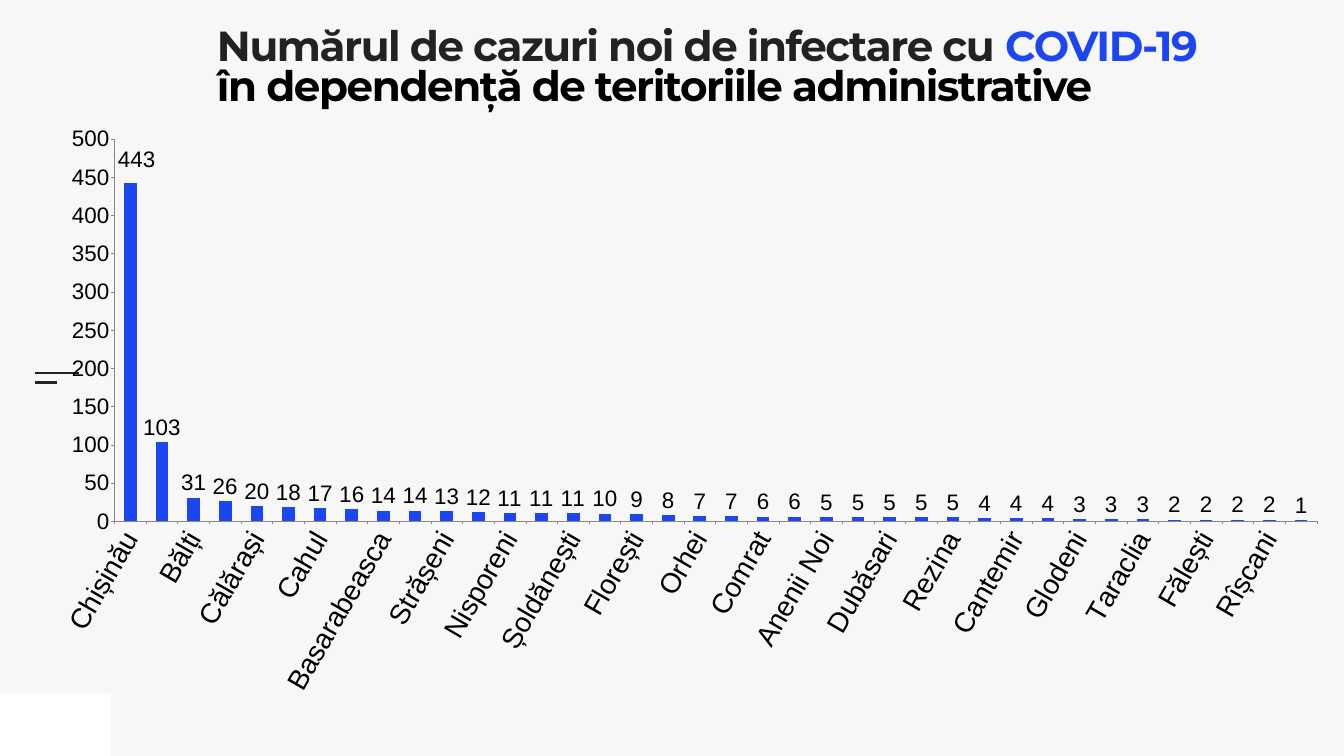
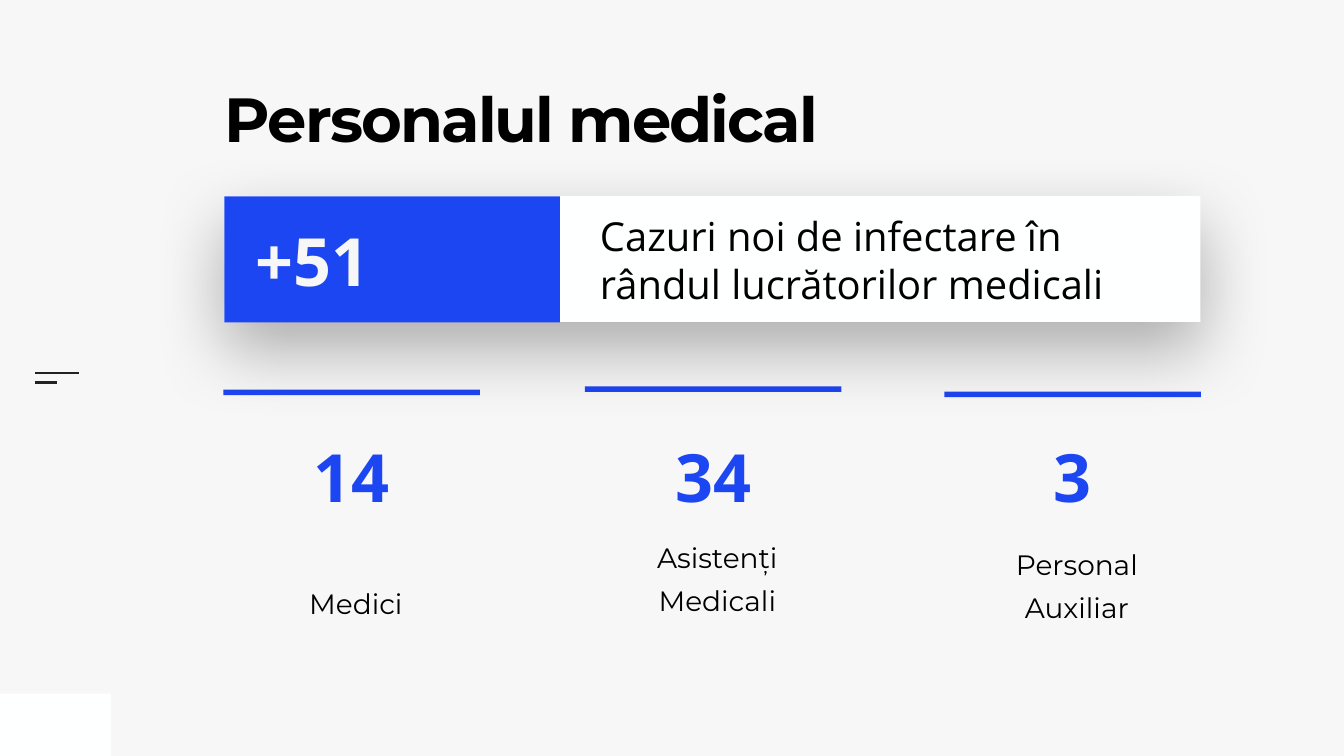
from dataclasses import dataclass

from lxml.etree import SubElement
from pptx import Presentation
from pptx.chart.data import CategoryChartData
from pptx.dml.color import RGBColor
from pptx.enum.chart import XL_CHART_TYPE as ChartType, XL_LABEL_POSITION as LabelPosition
from pptx.enum.chart import XL_TICK_MARK as TickMark
from pptx.enum.shapes import MSO_CONNECTOR as Connector, MSO_SHAPE as Shape
from pptx.enum.text import MSO_ANCHOR as Anchor, MSO_AUTO_SIZE as AutoSize, PP_ALIGN as Align
from pptx.oxml import parse_xml
from pptx.oxml.ns import nsdecls, qn
from pptx.util import Pt


@dataclass(frozen=True)
class Theme:
    paper: RGBColor = RGBColor(0xF7, 0xF7, 0xF7)
    white: RGBColor = RGBColor(0xFE, 0xFF, 0xFF)
    blue: RGBColor = RGBColor(0x1D, 0x46, 0xF3)
    ink: RGBColor = RGBColor(0x22, 0x22, 0x22)
    black: RGBColor = RGBColor(0, 0, 0)
    axis: RGBColor = RGBColor(0x87, 0x87, 0x87)
    heading_font: str = "Montserrat"
    figure_font: str = "Open Sans"
    chart_font: str = "Arial"
    chart_title: float = 60
    title: float = 89
    figure: float = 95
    headline: float = 57
    caption: float = 40
    values: float = 32


theme = Theme()


def add_panel(slide, left, top, width, height, fill):
    panel = slide.shapes.add_shape(Shape.RECTANGLE, Pt(left), Pt(top), Pt(width), Pt(height))
    panel.shadow.inherit = False
    panel.fill.solid()
    panel.fill.fore_color.rgb = fill
    panel.line.fill.background()
    return panel


def style_run(run, font, size, color, bold=False, tracking=0):
    """Format a run; tracking is the letter spacing in points."""
    run.font.name = font
    run.font.size = Pt(size)
    run.font.color.rgb = color
    run.font.bold = bold
    if tracking:
        run.font._element.set("spc", str(round(tracking * 100)))


prs = Presentation()
prs.slide_width, prs.slide_height = Pt(1920), Pt(1080)
background = prs.slide_master.background.fill
background.solid()
background.fore_color.rgb = theme.paper

# Parts that both slides share
title_boxes = [(310, 42, 1441, 196), (321, 134.6, 937, 196)]
for title_box in title_boxes:
    slide = prs.slides.add_slide(prs.slide_layouts[5])
    add_panel(slide, 0, 991, 158.4, 89, theme.white)
    for y, right in ((533.5, 113), (546.5, 81)):
        dash = slide.shapes.add_connector(Connector.STRAIGHT, Pt(50), Pt(y), Pt(right), Pt(y))
        dash.line.color.rgb = theme.ink
        dash.line.width = Pt(3)
        SubElement(dash._element.spPr, qn("a:effectLst"))
    title = slide.shapes.title
    title.left, title.top, title.width, title.height = map(Pt, title_box)
    frame = title.text_frame
    frame.margin_left = frame.margin_top = frame.margin_right = frame.margin_bottom = 0
    frame.vertical_anchor = Anchor.TOP
    frame.auto_size = AutoSize.NONE
    frame.word_wrap = True

territories, staff = prs.slides

# New cases by territory
frame = territories.shapes.title.text_frame
frame.text = "Numărul de cazuri noi de infectare cu \nîn dependență de teritoriile administrative"
frame.paragraphs[0].add_run().text = "COVID-19"
title_runs = [run for line in frame.paragraphs for run in line.runs]
for run, color in zip(title_runs, (theme.ink, theme.blue, theme.black)):
    style_run(run, theme.heading_font, theme.chart_title, color, True, -2)

cases = {
    "Chișinău": 443, "Transnistria": 103, "Bălți": 31, "Cimișlia": 26, "Călărași": 20,
    "Edineț": 18, "Cahul": 17, "Ștefan Vodă": 16, "Basarabeasca": 14, "Ialoveni": 14,
    "Strășeni": 13, "Telenești": 12, "Nisporeni": 11, "Ocnița": 11, "Șoldănești": 11,
    "Criuleni": 10, "Florești": 9, "Drochia": 8, "Orhei": 7, "Ungheni": 7, "Comrat": 6,
    "Sîngerei": 6, "Anenii Noi": 5, "Căușeni": 5, "Dubăsari": 5, "Hîncești": 5,
    "Rezina": 5, "Briceni": 4, "Cantemir": 4, "Vulcănești": 4, "Glodeni": 3, "Soroca": 3,
    "Taraclia": 3, "Dondușeni": 2, "Fălești": 2, "Leova": 2, "Rîșcani": 2,
    "Ceadîr-Lunga": 1,
}
case_data = CategoryChartData()
case_data.categories = list(cases)
case_data.add_series("Series 1", list(cases.values()))
chart = territories.shapes.add_chart(
    ChartType.COLUMN_CLUSTERED, Pt(82), Pt(180), Pt(1812), Pt(853), case_data).chart
chart.has_legend = False
chart.has_title = False
chart.font.name = theme.chart_font
chart.font.size = Pt(theme.caption)
chart.font.color.rgb = theme.black

plot = chart.plots[0]
plot.gap_width = 150
plot.vary_by_categories = False
columns = plot.series[0]
columns.format.fill.solid()
columns.format.fill.fore_color.rgb = theme.blue
first_label = columns.points[0].data_label
for labels in (columns.data_labels, first_label):
    labels.position = LabelPosition.OUTSIDE_END
    labels.font.size = Pt(theme.values)
    labels.font.name = theme.chart_font
    labels.font.color.rgb = theme.black
columns.data_labels.show_value = True

for axis, size in ((chart.category_axis, theme.caption), (chart.value_axis, theme.values)):
    axis.has_major_gridlines = False
    axis.major_tick_mark = TickMark.OUTSIDE
    axis.minor_tick_mark = TickMark.NONE
    axis.format.line.color.rgb = theme.axis
    axis.format.line.width = Pt(0.75)
    axis.tick_labels.font.size = Pt(size)
    axis.tick_labels.font.name = theme.chart_font
    axis.tick_labels.font.color.rgb = theme.black
chart.value_axis.minimum_scale = 0
chart.value_axis.maximum_scale = 500
chart.value_axis.major_unit = 50
name_angle = chart.category_axis._element.find(qn("c:txPr")).find(qn("a:bodyPr"))
name_angle.set("rot", "-3600000")
name_angle.set("vert", "horz")

plot_area = chart._chartSpace.find(".//" + qn("c:plotArea"))
label_node = chart._chartSpace.find(".//" + qn("c:dLbl"))
plot_layout = dict(layoutTarget="inner", xMode="edge", yMode="edge", x=0.045, y=0.022, w=0.948, h=0.64)
for parent, index, settings in ((plot_area, 0, plot_layout), (label_node, 1, dict(x=0.005, y=-0.015))):
    for old_layout in parent.findall(qn("c:layout")):
        parent.remove(old_layout)
    layout = parse_xml(f"<c:layout {nsdecls('c')}><c:manualLayout/></c:layout>")
    for key, value in settings.items():
        SubElement(layout[0], qn("c:" + key)).set("val", str(value))
    parent.insert(index, layout)

# Medical staff
frame = staff.shapes.title.text_frame
frame.text = "Personalul medical"
style_run(frame.paragraphs[0].runs[0], theme.heading_font, theme.title, theme.black, True, -2.7)
for slide in (territories, staff):
    for line in slide.shapes.title.text_frame.paragraphs:
        line.alignment = Align.LEFT
        line.line_spacing = 0.8

figures = [
    ("+51", (358.5, 306, 434, 130), Align.LEFT, theme.figure, theme.paper, True),
    ("Cazuri noi de infectare în rândul lucrătorilor medicali",
     (850, 294, 847, 152.6), Align.LEFT, theme.headline, theme.black, False),
]
card_width = 366.5
staff_groups = [
    ("Medici", "14", 319, 556.5, 556.5),
    ("Asistenți Medicali", "34", 835.5, 552, 552),
    ("Personal Auxiliar", "3", 1349, 562, 559.5),
]
for group, count, left, card_top, bar_top in staff_groups:
    card = add_panel(staff, left, card_top, card_width, 393, theme.paper)
    frame = card.text_frame
    frame.word_wrap = True
    frame.vertical_anchor = Anchor.BOTTOM
    frame.margin_left, frame.margin_top = Pt(40), Pt(51)
    frame.margin_right, frame.margin_bottom = Pt(28), Pt(63)
    frame.text = group
    caption = frame.paragraphs[0]
    caption.alignment = Align.CENTER
    caption.line_spacing = 1.3
    caption.space_before = Pt(20)
    style_run(caption.runs[0], theme.heading_font, theme.caption, theme.black)
    add_panel(staff, left, bar_top, card_width, 8, theme.blue)
    figures.append((count, (left, 615, card_width, 130), Align.CENTER, theme.figure, theme.blue, True))

banner = add_panel(staff, 320.4, 280, 1394.6, 180, theme.white)
banner._element.spPr.find(qn("a:effectLst")).append(parse_xml(
    f'<a:outerShdw {nsdecls("a")} blurRad="{Pt(100)}" dist="{Pt(40)}" dir="5400000" rotWithShape="0">'
    '<a:srgbClr val="000000"><a:alpha val="30000"/></a:srgbClr></a:outerShdw>'))
add_panel(staff, 320.4, 280.5, 479.5, 180, theme.blue)

for text, box, alignment, size, color, bold in figures:
    frame = staff.shapes.add_textbox(*map(Pt, box)).text_frame
    frame.word_wrap = True
    frame.vertical_anchor = Anchor.MIDDLE
    frame.margin_left = frame.margin_top = frame.margin_right = frame.margin_bottom = Pt(7.2)
    frame.text = text
    frame.paragraphs[0].alignment = alignment
    style_run(frame.paragraphs[0].runs[0], theme.figure_font, size, color, bold)

prs.save("out.pptx")
